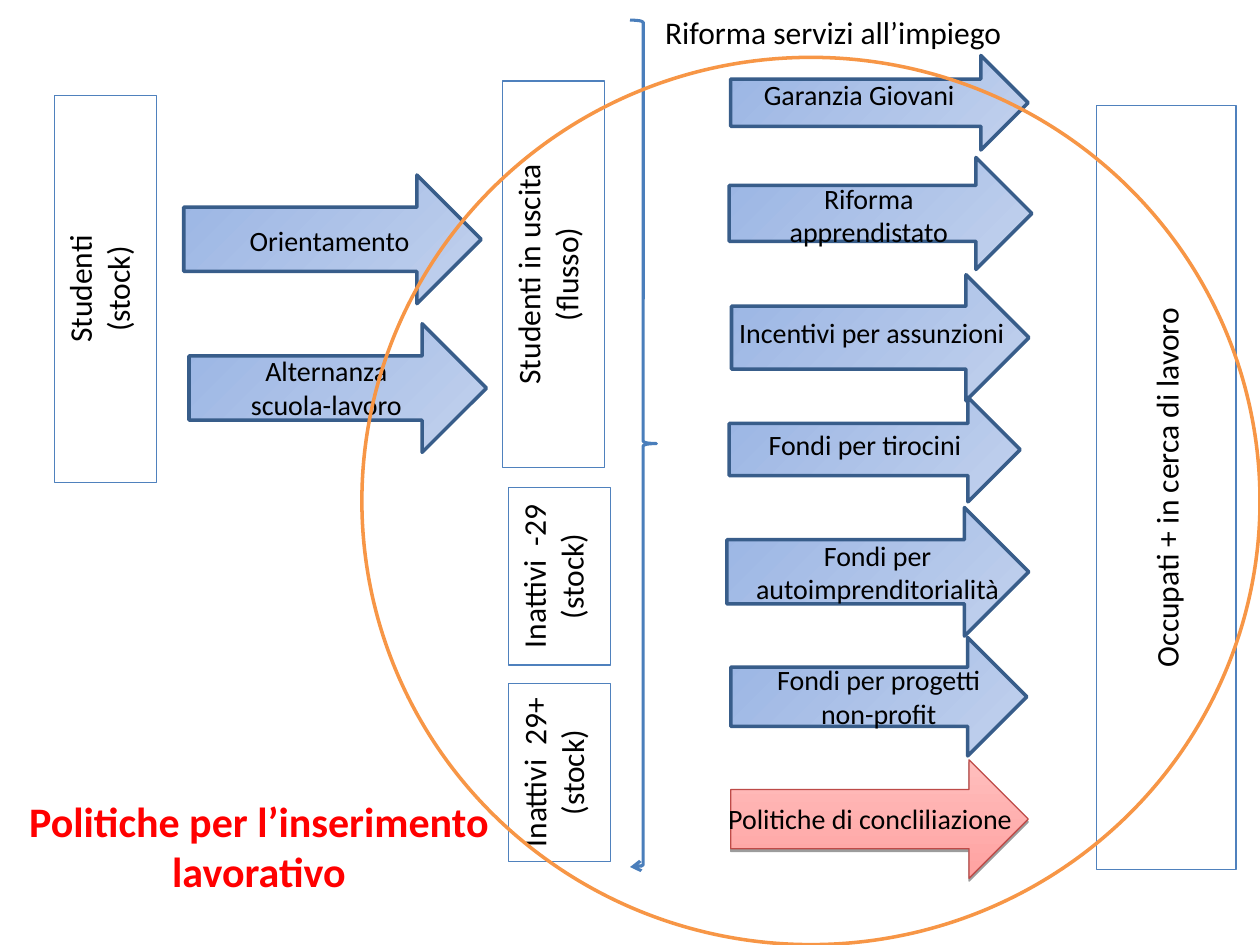
from dataclasses import dataclass

from lxml import etree
from pptx import Presentation
from pptx.dml.color import RGBColor
from pptx.enum.shapes import MSO_SHAPE
from pptx.enum.text import MSO_ANCHOR, MSO_AUTO_SIZE, PP_ALIGN
from pptx.oxml.ns import qn
from pptx.util import Pt

RECT, OVAL = MSO_SHAPE.RECTANGLE, MSO_SHAPE.OVAL
ARROW, BRACE = MSO_SHAPE.RIGHT_ARROW, MSO_SHAPE.RIGHT_BRACE
TOP, MIDDLE = MSO_ANCHOR.TOP, MSO_ANCHOR.MIDDLE
CENTER, LEFT = PP_ALIGN.CENTER, PP_ALIGN.LEFT
NO_AUTOFIT = MSO_AUTO_SIZE.NONE

FONT = "Calibri"
BLACK, RED = "000000", "FF0000"
BOX_LINE, BRACE_LINE, OVAL_LINE = "4F81BD", "4A7EBB", "F79646"


@dataclass(frozen=True)
class Place:
    x: float
    y: float
    w: float
    h: float

    def lengths(self) -> list:
        return [Pt(v) for v in (self.x, self.y, self.w, self.h)]


@dataclass(frozen=True)
class Style:
    start: str
    end: str
    angle: float
    line: str
    width: float
    shadow: bool = False


@dataclass(frozen=True)
class Group:
    text: str
    place: Place
    anchor: MSO_ANCHOR = TOP


BLUE = Style("9AB5E4", "C2D1ED", 315, "385D8A", 2)
PINK = Style("FFA2A1", "FFBEBD", 90, "BE4B48", 0.75, shadow=True)


@dataclass(frozen=True)
class Policy:
    text: str
    arrow: Place
    label: Place
    style: Style = BLUE


GROUPS = [
    Group("Studenti\n(stock)", Place(31, 54.7, 58.3, 221)),
    Group("Occupati + in cerca di lavoro", Place(626.4, 60.5, 80, 436.3), MIDDLE),
    Group("Studenti in uscita\n(flusso)", Place(287.3, 46.3, 58.3, 221)),
    Group("Inattivi  -29 (stock)", Place(290.4, 278.6, 58.3, 101.5)),
    Group("Inattivi  29+ (stock)", Place(290.7, 390.7, 58.3, 101.5)),
]

POLICIES = [
    Policy("Orientamento", Place(105, 100, 170, 73.5), Place(109.5, 124, 157.7, 27)),
    Policy("Alternanza\nscuola-lavoro", Place(108, 185, 170, 73.5), Place(134, 198.7, 105, 46)),
    Policy("Garanzia Giovani", Place(417.5, 31.7, 170, 54), Place(415, 41, 152, 27)),
    Policy("Riforma apprendistato", Place(416.7, 90, 173, 64), Place(420.5, 100, 152, 46)),
    Policy("Incentivi per assunzioni", Place(418, 157, 170, 72), Place(379, 177, 238.3, 27)),
    Policy("Fondi per tirocini", Place(416.7, 227, 166.3, 59.8), Place(418.3, 241, 152, 27)),
    Policy("Fondi per\nautoimprenditorialità", Place(415.4, 290, 172.5, 73.5),
           Place(382.3, 304, 238.3, 46)),
    Policy("Fondi per progetti\nnon-profit", Place(417.6, 364.3, 169.2, 67.7),
           Place(383, 375, 238.3, 46)),
    Policy("Politiche di concliliazione", Place(417.6, 434.2, 170, 67.7),
           Place(378, 454.3, 238.3, 27), PINK),
]


def color(value: str) -> RGBColor:
    return RGBColor.from_string(value)


def write(sp, text: str, size: float, value: str = BLACK, bold: bool = False,
          align: PP_ALIGN = CENTER, anchor: MSO_ANCHOR = TOP) -> None:
    tf = sp.text_frame
    tf.text = text
    tf.word_wrap = True
    tf.auto_size = NO_AUTOFIT
    tf.vertical_anchor = anchor
    for p in tf.paragraphs:
        p.alignment = align
        for r in p.runs:
            r.font.name = FONT
            r.font.size = Pt(size)
            r.font.bold = bold
            r.font.color.rgb = color(value)


def add_outline(s, kind: MSO_SHAPE, place: Place, line: str, width: float):
    sp = s.shapes.add_shape(kind, *place.lengths())
    sp.shadow.inherit = False
    sp.fill.background()
    sp.line.color.rgb = color(line)
    sp.line.width = Pt(width)
    return sp


def add_label(s, text: str, place: Place, size: float, align: PP_ALIGN = CENTER) -> None:
    write(s.shapes.add_textbox(*place.lengths()), text, size, align=align)


def add_group(s, group: Group) -> None:
    sp = add_outline(s, RECT, group.place, BOX_LINE, 0.75)
    write(sp, group.text, 18, anchor=group.anchor)
    sp.text_frame._txBody.bodyPr.set("vert", "vert270")


def add_drop_shadow(sp) -> None:
    effects = sp._element.spPr.find(qn("a:effectLst"))
    shadow = etree.SubElement(effects, qn("a:outerShdw"), blurRad="0",
                              dist=str(Pt(1.6)), dir="5400000", rotWithShape="0")
    tint = etree.SubElement(shadow, qn("a:srgbClr"), val=BLACK)
    etree.SubElement(tint, qn("a:alpha"), val="38000")


def add_policy(s, policy: Policy) -> None:
    style = policy.style
    sp = add_outline(s, ARROW, policy.arrow, style.line, style.width)
    sp.fill.gradient()
    sp.fill.gradient_angle = style.angle
    for stop, value, position in zip(sp.fill.gradient_stops, (style.start, style.end), (0, 1)):
        stop.color.rgb = color(value)
        stop.position = position
    if style.shadow:
        add_drop_shadow(sp)
    add_label(s, policy.text, policy.label, 16)


def main() -> None:
    prs = Presentation()
    prs.slide_width, prs.slide_height = Pt(720), Pt(540)
    s = prs.slides.add_slide(prs.slide_layouts[5])

    # Title
    title = s.shapes.title
    title.left, title.top, title.width, title.height = Place(-52.5, 450.7, 401, 65.5).lengths()
    write(title, "Politiche per l’inserimento\nlavorativo", 24, RED, bold=True)

    # Population groups
    for group in GROUPS:
        add_group(s, group)

    # Brace ending in an arrowhead
    brace = add_outline(s, BRACE, Place(360, 11.5, 15.1, 484), BRACE_LINE, 1.75)
    etree.SubElement(brace.line._get_or_add_ln(), qn("a:tailEnd"), type="arrow")
    add_label(s, "Riforma servizi all’impiego", Place(373, 3.6, 209, 29), 18, LEFT)

    # Policies
    for policy in POLICIES:
        add_policy(s, policy)

    # Area covered by the job placement policies
    add_outline(s, OVAL, Place(206.8, 32.8, 513.2, 507), OVAL_LINE, 2)

    prs.save("out.pptx")


if __name__ == "__main__":
    main()
